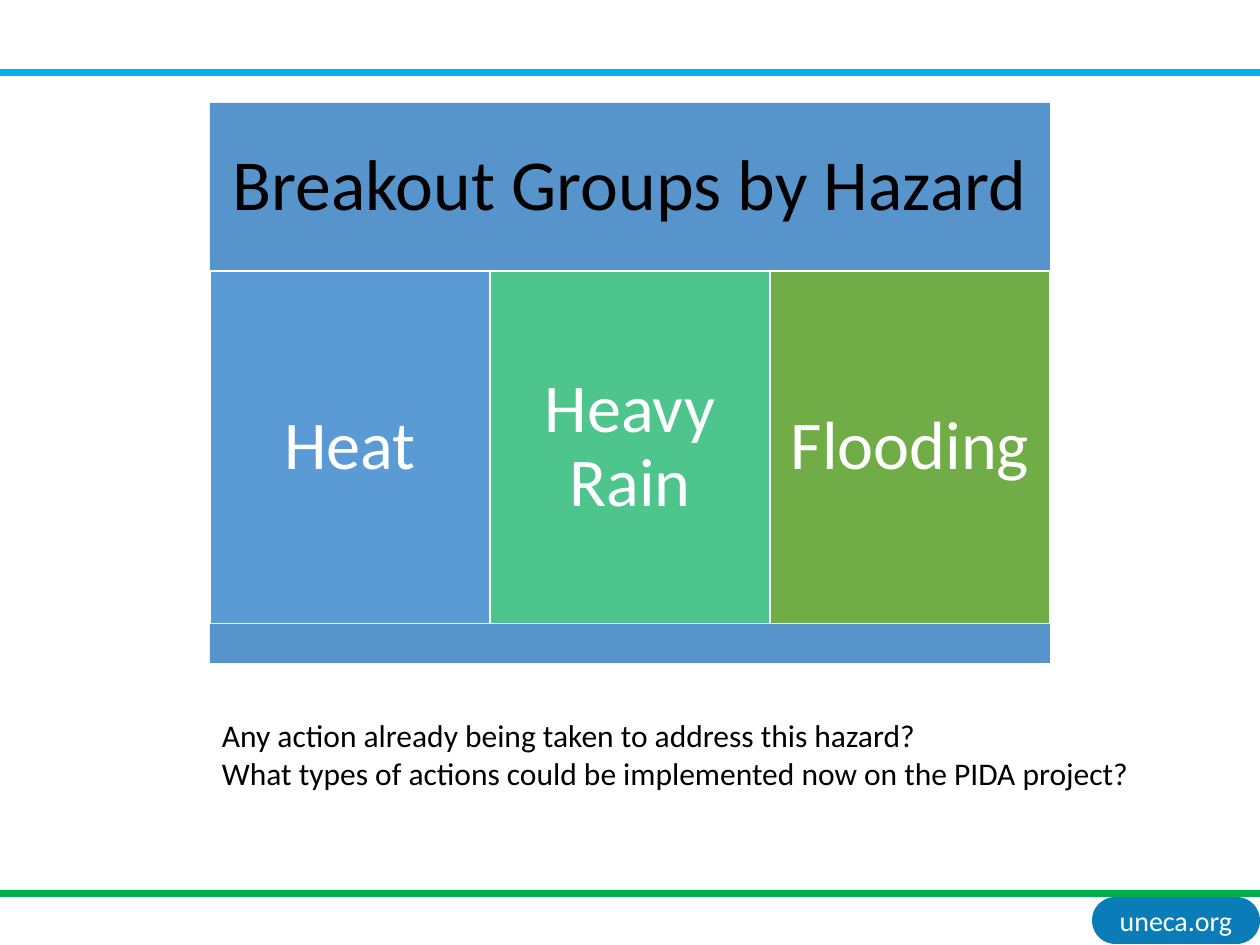
from dataclasses import dataclass

from pptx import Presentation
from pptx.dml.color import RGBColor
from pptx.enum.shapes import MSO_SHAPE
from pptx.enum.text import MSO_ANCHOR, MSO_AUTO_SIZE, PP_ALIGN
from pptx.util import Pt

RECT, ROUND = MSO_SHAPE.RECTANGLE, MSO_SHAPE.ROUNDED_RECTANGLE
MIDDLE, TOP = MSO_ANCHOR.MIDDLE, MSO_ANCHOR.TOP
CENTER, LEFT = PP_ALIGN.CENTER, PP_ALIGN.LEFT
FIXED = MSO_AUTO_SIZE.NONE
SCALE = 914400 / 126


@dataclass(frozen=True)
class Theme:
    font: str = "Calibri"
    black: str = "000000"
    white: str = "FFFFFF"
    sky: str = "00B0F0"
    green: str = "00B050"
    tab: str = "0A7CB8"
    band: str = "5794CB"
    title: int = 41
    card: int = 39
    body: int = 18
    foot: int = 16


THEME = Theme()
HAZARDS = [("Heat", "5B9BD5"), ("Heavy Rain", "4DC58D"), ("Flooding", "70AD47")]
ASKS = [
    "Any action already being taken to address this hazard?",
    "What types of actions could be implemented now on the PIDA project?",
]


def px(n):
    return round(n * SCALE)


def paint(part, color):
    part.fill.solid()
    part.fill.fore_color.rgb = RGBColor.from_string(color)


def block(slide, box, color, kind=RECT, edge=None):
    shape = slide.shapes.add_shape(kind, *map(px, box))
    shape.shadow.inherit = False
    paint(shape, color)
    if edge:
        paint(shape.line, edge)
        shape.line.width = Pt(1)
    else:
        shape.line.fill.background()
    return shape


def write(shape, lines, size, color, pad, align=CENTER, anchor=MIDDLE, lead=1.0):
    """Fill a shape with one paragraph a line; pad is (across, down) in px."""
    frame = shape.text_frame
    frame.text = "\n".join(lines)
    frame.word_wrap = True
    frame.auto_size = FIXED
    frame.vertical_anchor = anchor
    frame.margin_left = frame.margin_right = px(pad[0])
    frame.margin_top = frame.margin_bottom = px(pad[1])
    for para in frame.paragraphs:
        para.alignment = align
        para.line_spacing = lead
        para.space_before = Pt(0)
        para.font.name = THEME.font
        para.font.size = Pt(size)
        para.font.color.rgb = RGBColor.from_string(color)


def frame_page(slide):
    """Draw the rules at head and foot, and the address tab."""
    tab = block(slide, (1092, 897, 168, 47), THEME.tab, ROUND)
    tab.adjustments[0] = 0.5
    write(tab, ["uneca.org"], THEME.foot, THEME.white, (6, 6))
    block(slide, (0, 69, 1260, 7), THEME.sky)
    block(slide, (0, 890, 1260, 7), THEME.green)


def head(slide, box, text):
    title = slide.shapes.title
    title.left, title.top, title.width, title.height = map(px, box)
    paint(title, THEME.band)
    write(title, [text], THEME.title, THEME.black, (21, 21), lead=0.9)


def cards(slide, left, top, width, height):
    step = width // len(HAZARDS)
    for i, (name, color) in enumerate(HAZARDS):
        box = (left + i * step, top, step, height)
        card = block(slide, box, color, edge=THEME.white)
        write(card, [name], THEME.card, THEME.white, (20, 20), lead=0.9)


def main():
    deck = Presentation()
    deck.slide_width, deck.slide_height = px(1260), px(945)
    slide = deck.slides.add_slide(deck.slide_layouts[5])
    frame_page(slide)
    left, width = 210, 840
    head(slide, (left, 103, width, 168), "Breakout Groups by Hazard")
    cards(slide, left, 271, width, 353)
    block(slide, (left, 624, width, 39), THEME.band)
    asks = slide.shapes.add_textbox(*map(px, (left, 710, 944, 89)))
    write(asks, ASKS, THEME.body, THEME.black, (12, 6), LEFT, TOP)
    deck.save("out.pptx")


if __name__ == "__main__":
    main()
